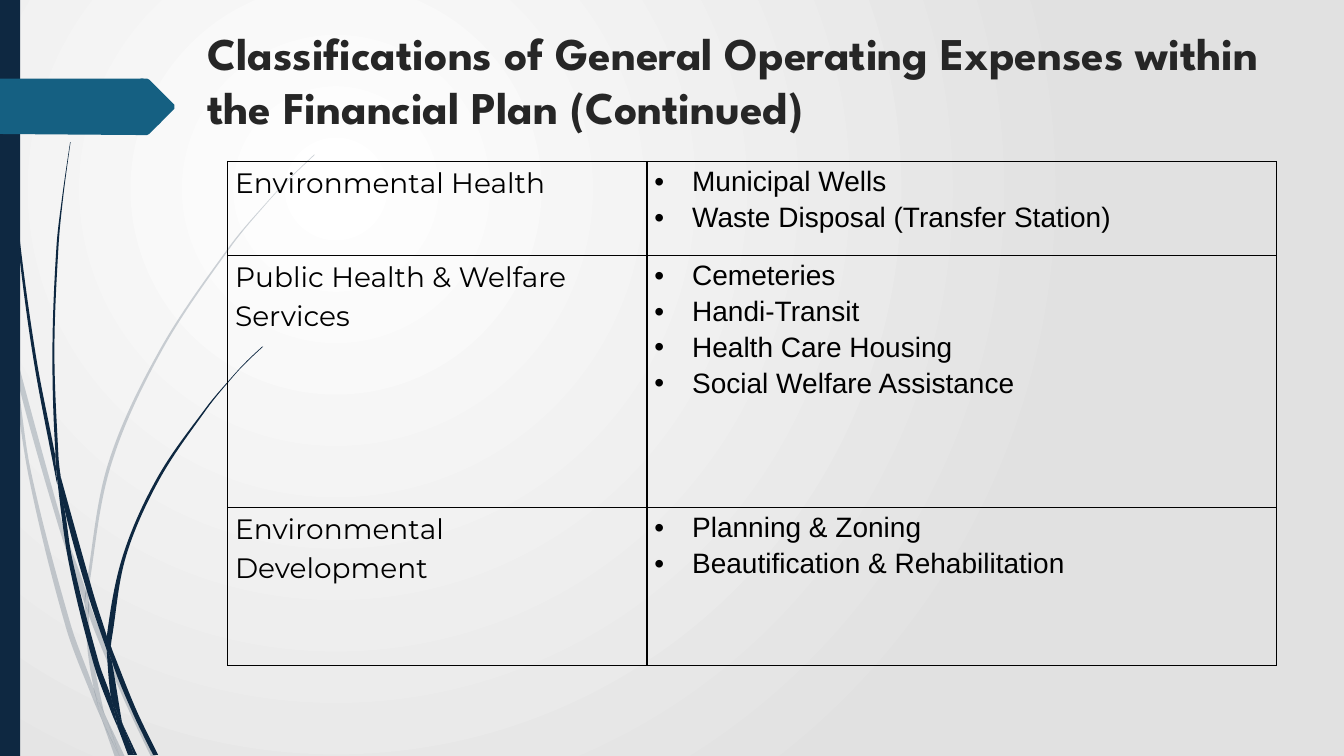
from math import hypot

from lxml.etree import SubElement as Sub
from pptx import Presentation
from pptx.dml.color import RGBColor as Rgb
from pptx.enum.shapes import MSO_SHAPE as Kind
from pptx.enum.text import MSO_ANCHOR as Anchor, MSO_AUTO_SIZE as Fit, PP_ALIGN as Align
from pptx.oxml import parse_xml
from pptx.oxml.ns import nsdecls, qn
from pptx.util import Pt

HUES = {"navy": "0E2841", "teal": "156082", "ink": "262626",
        "black": "000000", "white": "FFFFFF", "grey": "E1E1E1"}
WIDE, HIGH = 960, 540
UNIT = 0.72
SHARP = 0.8

PALE = [
    [(11, 350), (9, 322), (0, 282), (0, 299), (10, 344)],
    [(58, 522), (84, 599), (85, 586), (62, 520), (14, 345), (17, 376)],
    [(92, 607), (88, 596), (88, 610), (123, 694), (150, 751), (155, 751), (127, 692)],
    [(119, 751), (124, 751), (105, 711)],
    [(93, 683), (70, 619), (31, 469), (17, 376), (11, 350), (28, 470),
     (65, 621), (92, 693), (101, 714), (99, 707)],
    [(84, 599), (87, 646), (93, 683), (96, 692), (105, 711), (103, 706),
     (91, 646), (88, 610), (88, 608)],
    [(88, 584), (110, 462), (160, 349), (229, 245), (268, 198), (290, 175),
     (312, 154), (312, 153), (289, 175), (268, 197), (228, 244), (158, 348),
     (107, 461), (85, 584), (85, 586), (88, 596)],
    [(101, 714), (114, 751), (119, 751)],
    [(88, 608), (88, 610), (88, 596), (85, 586), (84, 599)],
    [(96, 692), (93, 683), (99, 707), (101, 714), (119, 751), (105, 711)],
]
DARK = [
    [(7, 110), (17, 233), (33, 355), (56, 477), (57, 481), (55, 457),
     (55, 453), (36, 355), (19, 232), (8, 109), (5, 48), (4, 0), (3, 0), (4, 48)],
    [(88, 592), (106, 645), (106, 633), (106, 631), (93, 590), (60, 472), (64, 505)],
    [(113, 649), (110, 641), (111, 656), (132, 708), (152, 749), (157, 749), (136, 706)],
    [(110, 691), (98, 657), (72, 556), (64, 505), (57, 477), (68, 557),
     (93, 659), (111, 708), (117, 722), (116, 717)],
    [(60, 472), (58, 453), (54, 349), (58, 245), (63, 193), (70, 141),
     (69.6, 141), (62, 193), (56, 245), (52, 349), (55, 449)],
    [(133, 749), (136, 749), (122, 719)],
    [(57, 477), (64, 505), (60, 472), (55, 449), (55, 453)],
    [(111, 633), (125, 552), (158, 476), (205, 406), (231, 374), (245, 359),
     (261, 344), (260, 344), (245, 358), (231, 373), (204, 405), (156, 474),
     (122, 551), (106, 631), (110, 641)],
    [(117, 722), (127, 749), (131, 749)],
    [(106, 645), (110, 691), (116, 706), (122, 719), (121, 716), (111, 656), (109, 651)],
    [(106, 645), (109, 651), (111, 656), (110, 641), (106, 631), (106, 633)],
    [(116, 706), (110, 691), (116, 717), (117, 722), (130, 749), (133, 749), (122, 719)],
]
ARROW = [(173, 108), (148, 133), (146, 134), (136, 134), (0, 133), (0, 78),
         (136, 78), (146, 78), (148, 79), (173, 104)]
ROWS = [
    (67, "Environmental Health",
     ["Municipal Wells", "Waste Disposal (Transfer Station)"]),
    (180, "Public Health & Welfare Services",
     ["Cemeteries", "Handi-Transit", "Health Care Housing",
      "Social Welfare Assistance"]),
    (113, "Environmental Development",
     ["Planning & Zoning", "Beautification & Rehabilitation"]),
]
COLS = (299.5, 449.8)


def tint(hue):
    return Rgb.from_string(HUES[hue])


def apply(item, form):
    for name, value in form.items():
        setattr(item, name, value)


def write(par, text, font, size, hue, bold=False):
    run = par.add_run()
    run.text = text
    apply(run.font, {"name": font, "size": Pt(size), "bold": bold})
    run.font.color.rgb = tint(hue)


def paint(shape, hue, alpha=100):
    shape.shadow.inherit = False
    shape.fill.solid()
    shape.fill.fore_color.rgb = tint(hue)
    shape.line.fill.background()
    if alpha < 100:
        clr = shape.fill._xPr.find(".//" + qn("a:srgbClr"))
        Sub(clr, qn("a:alpha"), val=str(alpha * 1000))


def back(slide):
    slide.background.fill.solid()
    frame = slide.element.find(".//" + qn("p:bgPr"))
    frame.replace(frame[0], parse_xml(
        f'<a:gradFill {nsdecls("a")} rotWithShape="1"><a:gsLst>'
        f'<a:gs pos="0"><a:srgbClr val="{HUES["white"]}"/></a:gs>'
        f'<a:gs pos="100000"><a:srgbClr val="{HUES["grey"]}"/></a:gs></a:gsLst>'
        '<a:path path="circle"><a:fillToRect l="50000" t="50000" '
        'r="100000" b="100000"/></a:path></a:gradFill>'))


def unit(start, end):
    x, y = end[0] - start[0], end[1] - start[1]
    size = hypot(x, y) or 1
    return x / size, y / size


def slope(prev, spot, post):
    a, b = unit(prev, spot), unit(spot, post)
    smooth = a[0] * b[0] + a[1] * b[1] > SHARP
    return unit(prev, post) if smooth else (0, 0)


def bend(shape):
    spots = [(int(pt.get("x")), int(pt.get("y")))
             for pt in shape._element.iter(qn("a:pt"))][:-1]
    count = len(spots)
    slopes = [slope(spots[i - 1], spots[i], spots[(i + 1) % count])
              for i in range(count)]
    for i, line in enumerate(list(shape._element.iter(qn("a:lnTo")))):
        j = (i + 1) % count
        (ax, ay), (bx, by) = spots[i], spots[j]
        (ux, uy), (vx, vy) = slopes[i], slopes[j]
        reach = hypot(bx - ax, by - ay) / 3
        line.tag = qn("a:cubicBezTo")
        line.remove(line[0])
        for x, y in ((ax + ux * reach, ay + uy * reach),
                     (bx - vx * reach, by - vy * reach), (bx, by)):
            Sub(line, qn("a:pt"), x=str(round(x)), y=str(round(y)))


def blade(shapes, box, knots, hue, alpha=100):
    spots = [(Pt(box[0] + x * UNIT), Pt(box[1] + y * UNIT)) for x, y in knots]
    form = shapes.build_freeform(*spots[0])
    form.add_line_segments(spots[1:] + spots[:1], close=True)
    shape = form.convert_to_shape()
    bend(shape)
    paint(shape, hue, alpha)


def decor(slide, box):
    for group, alpha in ((PALE, 20), (DARK, 100)):
        shapes = slide.shapes.add_group_shape().shapes
        for knots in group:
            blade(shapes, box, knots, "navy", alpha)
    left, top, _, high = box
    band = slide.shapes.add_shape(
        Kind.RECTANGLE, Pt(left), Pt(top), Pt(14.4), Pt(high))
    paint(band, "navy")
    blade(slide.shapes, box, ARROW, "teal")


def head(slide, box):
    title = slide.shapes.title
    apply(title, dict(zip(("left", "top", "width", "height"), map(Pt, box))))
    apply(title.text_frame, {"word_wrap": True, "auto_size": Fit.NONE,
                             "vertical_anchor": Anchor.TOP})
    par = title.text_frame.paragraphs[0]
    par.alignment = Align.LEFT
    write(par, "Classifications of General Operating Expenses within "
          "the Financial Plan (Continued)", "League Spartan", 32.4, "ink", True)


def border(cell):
    props = cell._tc.get_or_add_tcPr()
    for i, side in enumerate(("lnL", "lnR", "lnT", "lnB")):
        props.insert(i, parse_xml(
            f'<a:{side} {nsdecls("a")} w="12700"><a:solidFill>'
            f'<a:srgbClr val="{HUES["black"]}"/></a:solidFill></a:{side}>'))


def fill(cell, lines, font, dots):
    apply(cell, {"margin_left": Pt(5.2), "margin_right": Pt(5.2), "margin_top": 0,
                 "margin_bottom": 0, "vertical_anchor": Anchor.TOP})
    cell.fill.background()
    border(cell)
    frame = cell.text_frame
    for i, line in enumerate(lines):
        par = frame.add_paragraph() if i else frame.paragraphs[0]
        apply(par, {"line_spacing": 1.15,
                    "space_after": Pt(8 if line == lines[-1] else 0)})
        write(par, line, font, 20, "black")
        if dots:
            props = par._p.get_or_add_pPr()
            apply_dot = {"marL": Pt(27), "indent": -Pt(27)}
            for name, value in apply_dot.items():
                props.set(name, str(value))
            Sub(props, qn("a:buFont"), typeface="Arial")
            Sub(props, qn("a:buChar"), char="•")


def grid(slide, box):
    table = slide.shapes.add_table(len(ROWS), len(COLS), *map(Pt, box)).table
    apply(table, {"first_row": False, "horz_banding": False})
    for col, wide in zip(table.columns, COLS):
        col.width = Pt(wide)
    for row, (high, name, items) in zip(table.rows, ROWS):
        row.height = Pt(high)
        fill(row.cells[0], [name], "Montserrat", False)
        fill(row.cells[1], items, "Arial", True)


deck = Presentation()
apply(deck, {"slide_width": Pt(WIDE), "slide_height": Pt(HIGH)})
page = deck.slides.add_slide(deck.slide_layouts[5])
back(page)
decor(page, (0, 0, WIDE, HIGH))
head(page, (140.8, 14.2, 812, 101))
grid(page, (162.7, 115.3, sum(COLS), sum(row[0] for row in ROWS)))
deck.save("out.pptx")
